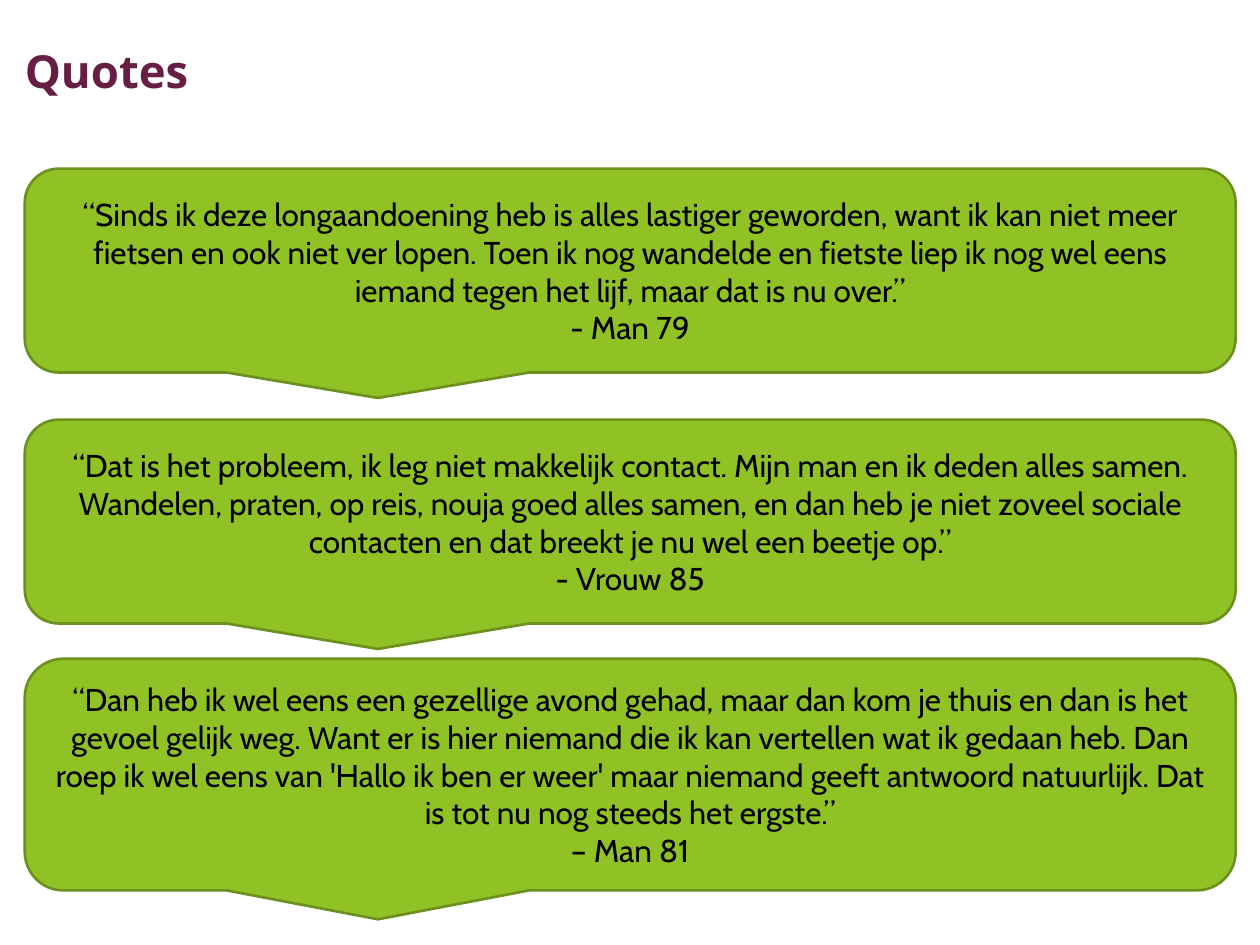
from pptx import Presentation
from pptx.dml.color import RGBColor
from pptx.enum.shapes import MSO_SHAPE as Shape
from pptx.enum.text import MSO_ANCHOR as Anchor, PP_ALIGN as Align
from pptx.util import Cm, Pt

TITLE_FONT = {"name": "Noto Sans", "size": Pt(26), "bold": True}
QUOTE_FONT = {"name": "Cabin", "size": Pt(18), "bold": False}
QUOTES = [
    (13.28, 4.67,
     "“Dan heb ik wel eens een gezellige avond gehad, maar dan kom je thuis en dan "
     "is het gevoel gelijk weg. Want er is hier niemand die ik kan vertellen wat ik "
     "gedaan heb. Dan roep ik wel eens van 'Hallo ik ben er weer' maar niemand geeft "
     "antwoord natuurlijk. Dat is tot nu nog steeds het ergste.”",
     "– Man 81"),
    (8.46, 4.11,
     "“Dat is het probleem, ik leg niet makkelijk contact. Mijn man en ik deden alles "
     "samen. Wandelen, praten, op reis, nouja goed alles samen, en dan heb je niet "
     "zoveel sociale contacten en dat breekt je nu wel een beetje op.”",
     "- Vrouw 85"),
    (3.4, 4.11,
     "“Sinds ik deze longaandoening heb is alles lastiger geworden, want ik kan niet "
     "meer fietsen en ook niet ver lopen. Toen ik nog wandelde en fietste liep ik nog "
     "wel eens iemand tegen het lijf, maar dat is nu over.”",
     "- Man 79"),
]


def color(value):
    """Return the colour for a hex string."""
    return RGBColor.from_string(value)


def set_values(target, values):
    """Set every attribute of target named in values."""
    for name, value in values.items():
        setattr(target, name, value)


def write_text(frame, lines, font, hex_color, alignment):
    """Write each line as a formatted paragraph in a wrapping frame."""
    set_values(frame, {"word_wrap": True, "vertical_anchor": Anchor.MIDDLE})
    for index, line in enumerate(lines):
        paragraph = frame.add_paragraph() if index else frame.paragraphs[0]
        paragraph.text = line
        paragraph.alignment = alignment
        set_values(paragraph.font, font)
        paragraph.font.color.rgb = color(hex_color)


def add_title(slide, text):
    """Add the slide title at the top left."""
    frame = slide.shapes.add_textbox(Cm(0), Cm(0), Cm(19.13), Cm(2.84)).text_frame
    set_values(frame, {"margin_left": Cm(0.5), "margin_right": Cm(0.25),
                       "margin_top": Cm(0.3), "margin_bottom": Cm(0.3)})
    write_text(frame, [text], TITLE_FONT, "671E45", Align.LEFT)


def add_quote(slide, top, height, quote, speaker):
    """Add a speech balloon with a quote and its speaker."""
    shape = slide.shapes.add_shape(Shape.ROUNDED_RECTANGULAR_CALLOUT,
                                   Cm(0.5), Cm(top), Cm(24.41), Cm(height))
    shape.shadow.inherit = False
    shape.fill.solid()
    shape.fill.fore_color.rgb = color("90C226")
    shape.line.color.rgb = color("6B901C")
    shape.line.width = Pt(1.5)
    write_text(shape.text_frame, [quote, speaker], QUOTE_FONT, "000000", Align.CENTER)


def main():
    """Build the quotes slide and save it."""
    presentation = Presentation()
    set_values(presentation, {"slide_width": Cm(25.4), "slide_height": Cm(19.05)})
    slide = presentation.slides.add_slide(presentation.slide_layouts[6])
    add_title(slide, "Quotes")
    for quote in QUOTES:
        add_quote(slide, *quote)
    presentation.save("out.pptx")


if __name__ == "__main__":
    main()
